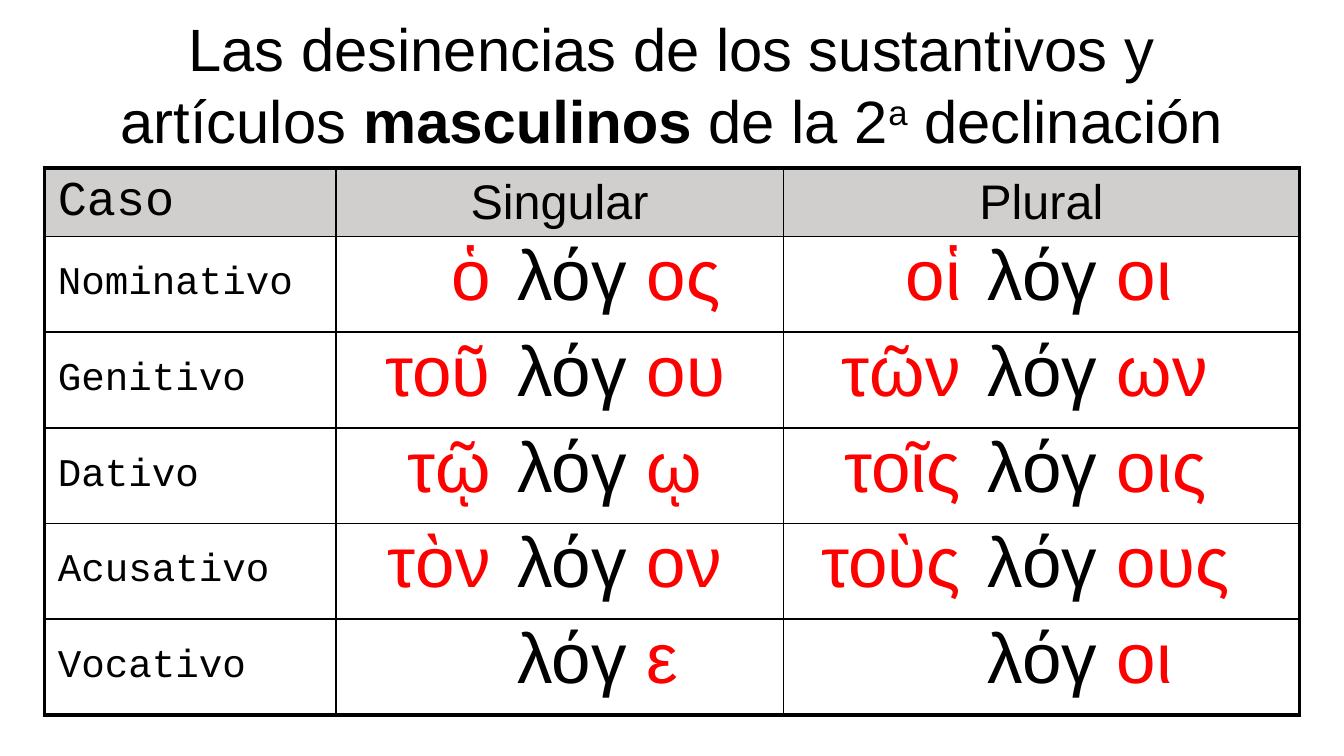
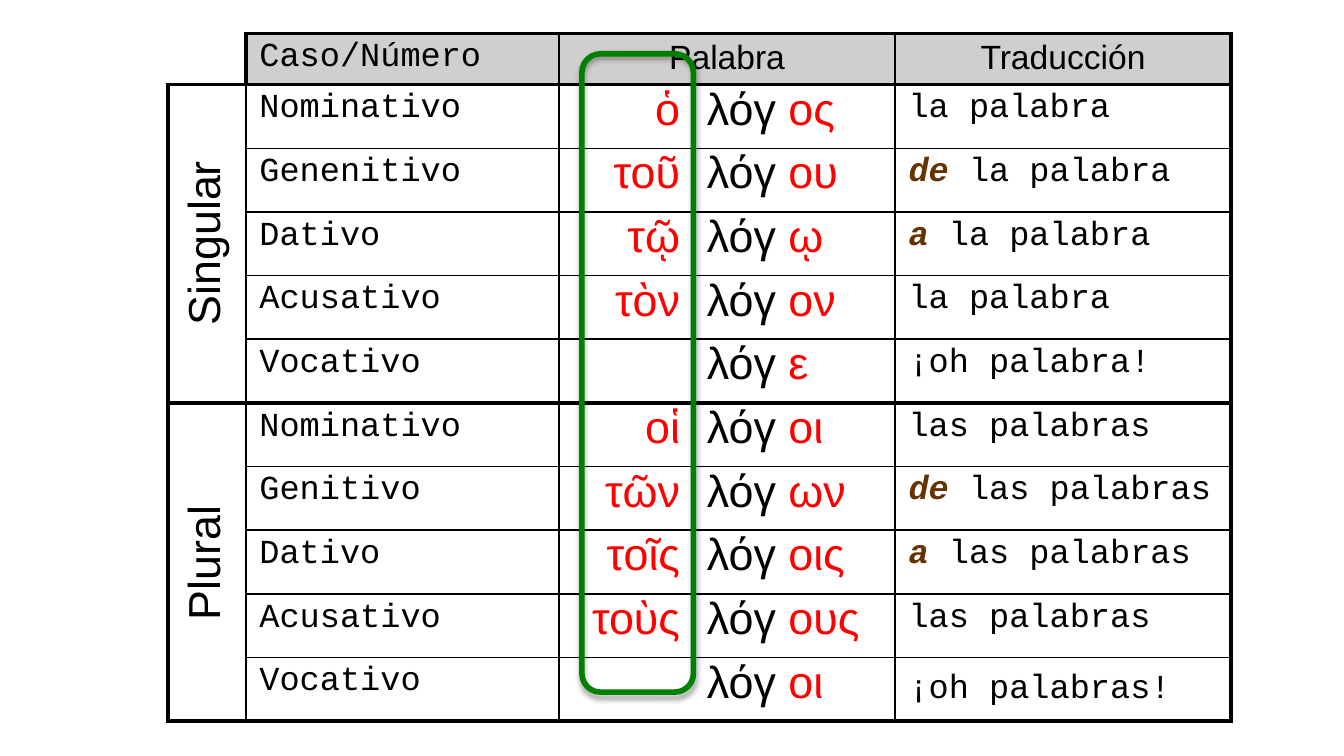
import lxml.etree
import pptx
import pptx.dml.color
import pptx.enum.shapes
import pptx.enum.text
import pptx.oxml
import pptx.oxml.ns
import pptx.table
import pptx.util

Inches = pptx.util.Inches
Pt = pptx.util.Pt
RGBColor = pptx.dml.color.RGBColor
ALIGN = pptx.enum.text.PP_ALIGN
ANCHOR = pptx.enum.text.MSO_ANCHOR
qn = pptx.oxml.ns.qn

BLACK = RGBColor(0x00, 0x00, 0x00)
RED = RGBColor(0xFF, 0x00, 0x00)
BROWN = RGBColor(0x66, 0x33, 0x00)
GREEN = RGBColor(0x00, 0x80, 0x00)
GREY = RGBColor(0xD1, 0xCF, 0xCD)
SANS = "Arial"
MONO = "Courier New"
THIN = 1
THICK = 2.25
PLAIN_TABLE = "{2D5ABB26-0587-4C30-8999-92F81FD0307C}"
STEM = "λόγ "

CASES = ["Nominativo", "Genitivo", "Dativo", "Acusativo", "Vocativo"]
SINGULAR = [("ὁ", "ος"), ("τοῦ", "ου"), ("τῷ", "ῳ"), ("τὸν", "ον"), ("", "ε")]
PLURAL = [("οἱ", "οι"), ("τῶν", "ων"), ("τοῖς", "οις"), ("τοὺς", "ους"), ("", "οι")]
PREPOSITIONS = ["", "de", "a", "", ""]


def write(holder, pieces, size, font, align=ALIGN.LEFT, before=20, top=0.04):
    if isinstance(holder, pptx.table._Cell):
        holder.margin_top = Inches(top)
        holder.margin_bottom = Inches(0.04)
    para = holder.text_frame.paragraphs[0]
    para.alignment = align
    para.font.size = Pt(size)
    para.font.name = font
    colours = {colour for text, colour in pieces}
    if len(colours) == 1:
        para.font.color.rgb = pieces[0][1]
    for text, colour in pieces:
        span = para.add_run()
        span.text = text
        if len(colours) > 1:
            span.font.color.rgb = colour
    spacing = lxml.etree.Element(qn("a:spcBef"))
    lxml.etree.SubElement(spacing, qn("a:spcPct"), val=str(before * 1000))
    para._p.get_or_add_pPr().insert(0, spacing)
    return para


def add_grid(page, left, top, height, columns, header, count, merges,
             verticals, horizontals, empty_corner=False):
    frame = page.shapes.add_table(count + 1, len(columns), Inches(left), Inches(top),
                                  Inches(sum(columns)), Inches(height))
    table = frame.table
    table.first_row = False
    table.horz_banding = False
    table._tbl.tblPr.find(qn("a:tableStyleId")).text = PLAIN_TABLE
    for column, width in zip(table.columns, columns):
        column.width = Inches(width)
    for index, row in enumerate(table.rows):
        row.height = Inches((height - header) / count if index else header)
    for first, last in merges:
        table.cell(*first).merge(table.cell(*last))
    for r in range(count + 1):
        for c in range(len(columns)):
            cell = table.cell(r, c)
            if cell.is_spanned:
                continue
            edges = {
                "lnL": verticals[c],
                "lnR": verticals[c + cell.span_width],
                "lnT": horizontals[r],
                "lnB": horizontals[r + cell.span_height],
            }
            corner = empty_corner and r == c == 0
            if corner:
                edges.update(lnL=0, lnR=THICK, lnT=0)
            elif empty_corner and (r, c) == (0, 1):
                edges["lnL"] = THICK
            for name, width in edges.items():
                line = lxml.etree.SubElement(cell._tc.get_or_add_tcPr(), qn("a:" + name),
                                             w=str(Pt(width)))
                if width:
                    fill = lxml.etree.SubElement(line, qn("a:solidFill"))
                    lxml.etree.SubElement(fill, qn("a:srgbClr"), val=str(BLACK))
                else:
                    lxml.etree.SubElement(line, qn("a:noFill"))
            if r == 0 and not corner:
                cell.fill.solid()
                cell.fill.fore_color.rgb = GREY
            else:
                cell.fill.background()
    return table


deck = pptx.Presentation()
deck.slide_width = Inches(10)
deck.slide_height = Inches(10 * 9 / 16)

page = deck.slides.add_slide(deck.slide_layouts[5])
title = page.shapes.title
title.left, title.top = Inches(0.5), Inches(0.15)
title.width, title.height = Inches(9), Inches(0.94)
title.text_frame.vertical_anchor = ANCHOR.MIDDLE
title_pieces = ["Las desinencias de los sustantivos y artículos ", "masculinos",
                " de la 2", "a", " declinación"]
para = write(title, [(text, BLACK) for text in title_pieces], 32, SANS, ALIGN.CENTER, before=0)
para.runs[1].font.bold = True
para.runs[3].font._rPr.set("baseline", "30000")

table = add_grid(page, 0.33, 1.25, 4.07, [2.17, 1.25, 2.08, 1.42, 2.42], 0.51, 5,
                 [((0, 1), (0, 2)), ((0, 3), (0, 4))],
                 [THICK, THIN, 0, THIN, 0, THICK],
                 [THICK] + [THIN] * 5 + [THICK])
for c, text in [(0, "Caso"), (1, "Singular"), (3, "Plural")]:
    cell = table.cell(0, c)
    cell.vertical_anchor = ANCHOR.MIDDLE
    write(cell, [(text, BLACK)], 26, SANS if c else MONO, ALIGN.CENTER if c else ALIGN.LEFT)
for r, case in enumerate(CASES, 1):
    cell = table.cell(r, 0)
    cell.vertical_anchor = ANCHOR.MIDDLE
    write(cell, [(case, BLACK)], 21, MONO)
    for c, forms in [(1, SINGULAR), (3, PLURAL)]:
        article, ending = forms[r - 1]
        if article:
            write(table.cell(r, c), [(article, RED)], 38, SANS, ALIGN.RIGHT, top=0)
        write(table.cell(r, c + 1), [(STEM, BLACK), (ending, RED)], 38, SANS, top=0)

page = deck.slides.add_slide(deck.slide_layouts[6])
table = add_grid(page, 1.25, 0.25, 5.12, [0.58, 2.33, 1, 1.5, 2.5], 0.38, 10,
                 [((0, 2), (0, 3)), ((1, 0), (5, 0)), ((6, 0), (10, 0))],
                 [THICK, THIN, THIN, 0, THIN, THICK],
                 [THICK] + ([THICK] + [THIN] * 4) * 2 + [THICK], empty_corner=True)
table.cell(0, 0).margin_top = table.cell(0, 0).margin_bottom = 0
for c, text in [(1, "Caso/Número"), (2, "Palabra"), (4, "Traducción")]:
    write(table.cell(0, c), [(text, BLACK)], 18, MONO if c == 1 else SANS,
          ALIGN.LEFT if c == 1 else ALIGN.CENTER)

groups = [("Singular", SINGULAR, "la palabra", "¡oh palabra!", 1.56),
          ("Plural", PLURAL, "las palabras", "¡oh palabras!", 3.94)]
for group, (number, forms, noun, call, label_top) in enumerate(groups):
    for index, (case, (article, ending), preposition) in enumerate(zip(CASES, forms, PREPOSITIONS)):
        r = 1 + group * 5 + index
        shown_case = "Genenitivo" if r == 2 else case
        write(table.cell(r, 1), [(shown_case, BLACK)], 18, MONO)
        if article:
            write(table.cell(r, 2), [(article, RED)], 24, SANS, ALIGN.RIGHT, top=0)
        write(table.cell(r, 3), [(STEM, BLACK), (ending, RED)], 24, SANS, top=0)
        if preposition:
            para = write(table.cell(r, 4), [(preposition, BROWN), (" " + noun, BLACK)], 18, MONO)
            para.runs[0].font.bold = True
            para.runs[0].font.italic = True
        else:
            translation = call if case == "Vocativo" else noun
            para = write(table.cell(r, 4), [(translation, BLACK)], 18, MONO)
    box = page.shapes.add_textbox(Inches(0.38), Inches(label_top), Inches(2.25), Inches(0.5))
    box.rotation = 270
    box.text_frame.word_wrap = True
    box.text_frame.auto_size = pptx.enum.text.MSO_AUTO_SIZE.SHAPE_TO_FIT_TEXT
    write(box, [(number, BLACK)], 24, SANS, ALIGN.CENTER, before=50)

span = para.add_run()
span.text = " "
span.font.size = Pt(21)
span.font.name = SANS

article_frame = page.shapes.add_shape(pptx.enum.shapes.MSO_SHAPE.ROUNDED_RECTANGLE,
                                      Inches(4.33), Inches(0.4), Inches(0.83), Inches(4.75))
article_frame.fill.background()
article_frame.line.color.rgb = GREEN
article_frame.line.width = Pt(3)
article_frame.shadow.inherit = False
effects = article_frame._element.spPr.find(qn("a:effectLst"))
shadow = lxml.etree.SubElement(effects, qn("a:outerShdw"), blurRad=str(Pt(3.1)),
                               dist=str(Pt(1.8)), dir="5400000", rotWithShape="0")
shadow_colour = lxml.etree.SubElement(shadow, qn("a:srgbClr"), val=str(BLACK))
lxml.etree.SubElement(shadow_colour, qn("a:alpha"), val="35000")

deck.save("out.pptx")
